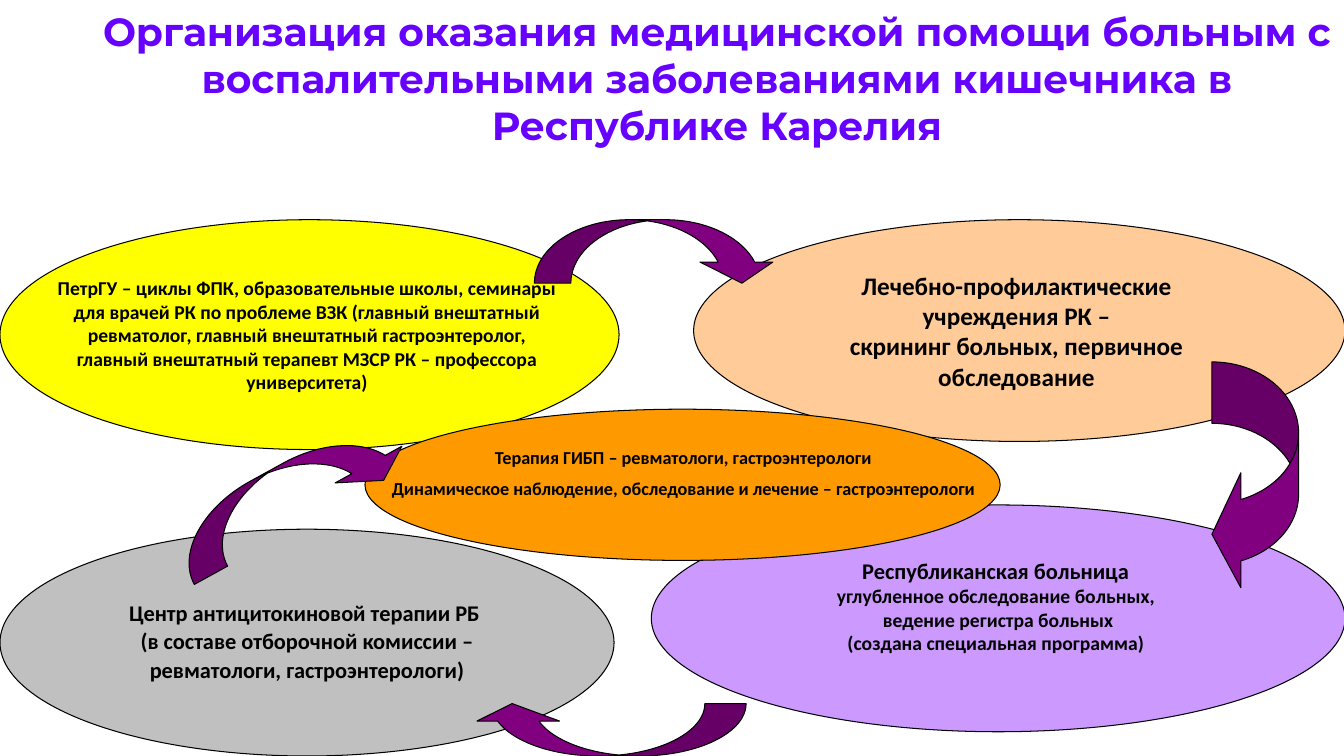
"""Build the slide on organising care for inflammatory bowel disease patients."""
from dataclasses import dataclass

from pptx import Presentation
from pptx.dml.color import RGBColor
from pptx.enum.shapes import MSO_SHAPE
from pptx.enum.text import MSO_ANCHOR, PP_ALIGN
from pptx.util import Inches, Pt

BLACK = "000000"
VIOLET = "6600FF"
PURPLE = "800080"


@dataclass(frozen=True)
class Box:
    left: float
    top: float
    width: float
    height: float


@dataclass(frozen=True)
class Text:
    lines: tuple[str, ...]
    size: float
    first_size: float | None = None
    font: str = "Calibri"
    color: str = BLACK
    line_spacing: float = 1.0
    gap: float = 0
    wrap: bool = True
    anchor: MSO_ANCHOR = MSO_ANCHOR.MIDDLE
    bottom_margin: float = 0.05


@dataclass(frozen=True)
class Ellipse:
    box: Box
    fill: str
    text: Text | None = None


@dataclass(frozen=True)
class Label:
    box: Box
    text: Text


@dataclass(frozen=True)
class Arrow:
    box: Box
    rotation: float
    shaft: float


TITLE = Label(Box(0.58, 0, 13.17, 1.54), Text(
    ("Организация оказания медицинской помощи больным с \v"
     "воспалительными заболеваниями кишечника в \vРеспублике Карелия ",),
    28, font="Montserrat", color=VIOLET))

PARTICIPANTS = (
    Ellipse(Box(0, 2.18, 6.14, 2.28), "FFFF00"),
    Ellipse(Box(6.88, 2.18, 6.46, 2.2), "FFCC99", Text(
        ("Лечебно-профилактические ", "учреждения РК – ",
         "скрининг больных, первичное ", "обследование "), 18, wrap=False)),
    Ellipse(Box(6.46, 5.01, 6.88, 2.25), "CC99FF", Text(
        ("Республиканская больница ", "углубленное обследование больных, ",
         "ведение регистра больных", "(создана специальная программа) "),
        14, first_size=16, wrap=False, bottom_margin=0.3)),
    Ellipse(Box(0, 5.25, 6.09, 2.25), "C0C0C0", Text(
        ("Центр антицитокиновой терапии РБ ", "(в составе отборочной комиссии –",
         "ревматологи, гастроэнтерологи)"),
        16, line_spacing=0.9, gap=3.2, wrap=False)),
    Label(Box(0.47, 2.69, 5.15, 1.28), Text(
        ("ПетрГУ – циклы ФПК, образовательные школы, семинары для врачей РК "
         "по проблеме ВЗК (главный внештатный ревматолог, главный внештатный "
         "гастроэнтеролог, главный внештатный терапевт МЗСР РК – профессора "
         "университета)",), 14, anchor=MSO_ANCHOR.TOP)),
    Ellipse(Box(3.62, 4.06, 6.3, 1.5), "FF9900"),
    Label(Box(3.52, 4.38, 6.51, 0.65), Text(
        ("Терапия ГИБП – ревматологи, гастроэнтерологи",
         "Динамическое наблюдение, обследование и лечение – гастроэнтерологи"),
        13, gap=6.5, anchor=MSO_ANCHOR.TOP)),
)

ARROWS = (
    Arrow(Box(5.3, 2.18, 2.42, 0.63), 0, 0.575),
    Arrow(Box(11.31, 4.3, 2.28, 0.86), 90, 0.709),
    Arrow(Box(4.67, 6.98, 2.73, 0.52), 180, 0.787),
    Arrow(Box(1.62, 4.6, 2.52, 0.63), 331.2, 0.599),
)


def rgb(value: str) -> RGBColor:
    return RGBColor.from_string(value)


def inches(box: Box) -> tuple:
    return tuple(Inches(length) for length in (box.left, box.top, box.width, box.height))


def write_text(frame, text: Text) -> None:
    frame.word_wrap = text.wrap
    frame.vertical_anchor = text.anchor
    frame.margin_bottom = Inches(text.bottom_margin)
    frame.text = "\n".join(text.lines)
    for index, paragraph in enumerate(frame.paragraphs):
        paragraph.alignment = PP_ALIGN.CENTER
        paragraph.line_spacing = text.line_spacing
        paragraph.space_before = Pt(text.gap if index else 0)
        font = paragraph.font
        font.name = text.font
        font.size = Pt(text.size if index else text.first_size or text.size)
        font.bold = True
        font.color.rgb = rgb(text.color)


def add_outlined(slide, kind: MSO_SHAPE, box: Box, fill: str):
    shape = slide.shapes.add_shape(kind, *inches(box))
    shape.shadow.inherit = False
    shape.fill.solid()
    shape.fill.fore_color.rgb = rgb(fill)
    shape.line.color.rgb = rgb(BLACK)
    shape.line.width = Pt(0.75)
    return shape


def draw_ellipse(slide, ellipse: Ellipse) -> None:
    shape = add_outlined(slide, MSO_SHAPE.OVAL, ellipse.box, ellipse.fill)
    if ellipse.text:
        write_text(shape.text_frame, ellipse.text)


def draw_label(slide, label: Label) -> None:
    write_text(slide.shapes.add_textbox(*inches(label.box)).text_frame, label.text)


def draw_arrow(slide, arrow: Arrow) -> None:
    shape = add_outlined(slide, MSO_SHAPE.CURVED_DOWN_ARROW, arrow.box, PURPLE)
    shape.rotation = arrow.rotation
    for index, value in enumerate((arrow.shaft, 2 * arrow.shaft, 0.333)):
        shape.adjustments[index] = value


def main() -> None:
    presentation = Presentation()
    presentation.slide_width = Inches(13.33)
    presentation.slide_height = Inches(7.5)
    slide = presentation.slides.add_slide(presentation.slide_layouts[6])
    draw_label(slide, TITLE)
    for participant in PARTICIPANTS:
        if isinstance(participant, Ellipse):
            draw_ellipse(slide, participant)
        else:
            draw_label(slide, participant)
    for arrow in ARROWS:
        draw_arrow(slide, arrow)
    presentation.save("out.pptx")


if __name__ == "__main__":
    main()
